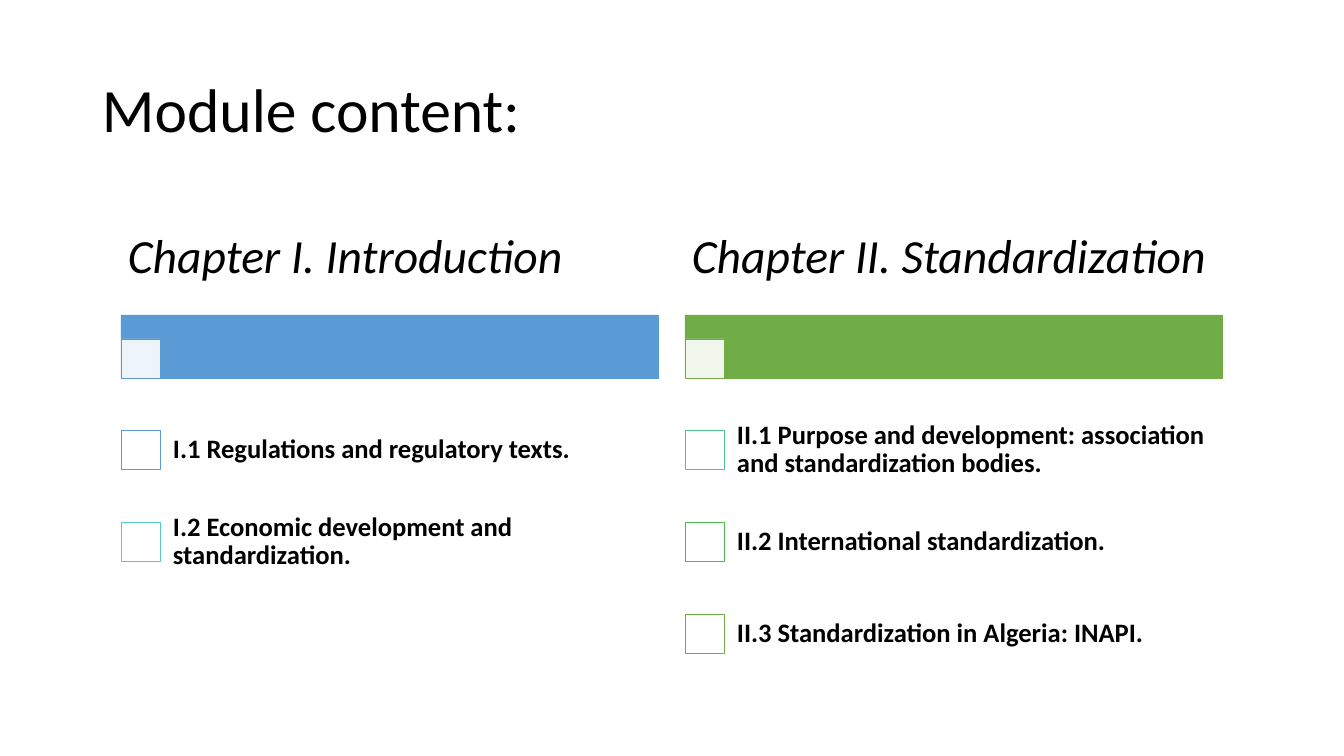
from lxml.etree import SubElement
from pptx import Presentation
from pptx.dml.color import RGBColor
from pptx.enum.shapes import MSO_SHAPE
from pptx.enum.text import MSO_ANCHOR
from pptx.oxml.ns import qn
from pptx.util import Pt

SLIDE_WIDTH, SLIDE_HEIGHT = 1344, 756
EMU_PER_PX = 12192000 / SLIDE_WIDTH

BLACK = RGBColor(0x00, 0x00, 0x00)
WHITE = RGBColor(0xFF, 0xFF, 0xFF)
BLUE = RGBColor(0x5B, 0x9B, 0xD5)
TURQUOISE = RGBColor(0x54, 0xCC, 0xCD)
SEA_GREEN = RGBColor(0x4D, 0xC5, 0x8D)
BRIGHT_GREEN = RGBColor(0x48, 0xBB, 0x4F)
GREEN = RGBColor(0x70, 0xAD, 0x47)

COLUMN_LEFT, COLUMN_PITCH, COLUMN_WIDTH = 121, 564, 537
HEADING_TOP, HEADING_HEIGHT = 202, 113
BAR_TOP, BAR_HEIGHT = 315, 63
BOX_SIZE = 39
ROW_TOP, ROW_HEIGHT = 404, 92
ITEM_INDENT = 37

CHAPTERS = [
    ("Chapter I. Introduction", BLUE, [
        ("I.1 Regulations and regulatory texts.", BLUE),
        ("I.2 Economic development and standardization.", TURQUOISE),
    ]),
    ("Chapter II. Standardization", GREEN, [
        ("II.1 Purpose and development: association and standardization bodies.", SEA_GREEN),
        ("II.2 International standardization.", BRIGHT_GREEN),
        ("II.3 Standardization in Algeria: INAPI.", GREEN),
    ]),
]

presentation = Presentation()
presentation.slide_width = round(SLIDE_WIDTH * EMU_PER_PX)
presentation.slide_height = round(SLIDE_HEIGHT * EMU_PER_PX)
slide = presentation.slides.add_slide(presentation.slide_layouts[6])


def add_rectangle(left, top, width, height, fill, line):
    position = [round(value * EMU_PER_PX) for value in (left, top, width, height)]
    shape = slide.shapes.add_shape(MSO_SHAPE.RECTANGLE, *position)
    shape.shadow.inherit = False
    shape.fill.solid()
    shape.fill.fore_color.rgb = fill
    shape.line.color.rgb = line
    shape.line.width = Pt(0.5)
    return shape


def add_text(left, top, width, height, text, size, inset_x, inset_y, bold=False, italic=False):
    position = [round(value * EMU_PER_PX) for value in (left, top, width, height)]
    frame = slide.shapes.add_textbox(*position).text_frame
    frame.word_wrap = True
    frame.vertical_anchor = MSO_ANCHOR.MIDDLE
    frame.margin_left = frame.margin_right = round(inset_x * EMU_PER_PX)
    frame.margin_top = frame.margin_bottom = round(inset_y * EMU_PER_PX)
    paragraph = frame.paragraphs[0]
    paragraph.line_spacing = 0.9
    run = paragraph.add_run()
    run.text = text
    run.font.name = "Calibri"
    run.font.size = Pt(size)
    run.font.bold = bold
    run.font.italic = italic
    run.font.color.rgb = BLACK


add_text(92, 40, 1159, 146, "Module content:", 44, 10, 5)

for column, (heading, color, items) in enumerate(CHAPTERS):
    left = COLUMN_LEFT + column * COLUMN_PITCH
    add_rectangle(left, BAR_TOP, COLUMN_WIDTH, BAR_HEIGHT, color, color)
    marker = add_rectangle(left, BAR_TOP + BAR_HEIGHT - BOX_SIZE, BOX_SIZE, BOX_SIZE, WHITE, color)
    marker_color = marker.fill._xPr.find(qn("a:solidFill")).find(qn("a:srgbClr"))
    SubElement(marker_color, qn("a:alpha"), val="90000")
    add_text(left, HEADING_TOP, COLUMN_WIDTH, HEADING_HEIGHT, heading, 34, 7, 5, italic=True)

    for row, (item, outline) in enumerate(items):
        top = ROW_TOP + row * ROW_HEIGHT
        add_rectangle(left, top + (ROW_HEIGHT - BOX_SIZE) // 2, BOX_SIZE, BOX_SIZE, WHITE, outline)
        add_text(left + ITEM_INDENT, top, COLUMN_WIDTH - ITEM_INDENT, ROW_HEIGHT,
                 item, 19, 15, 15, bold=True)

presentation.save("out.pptx")
